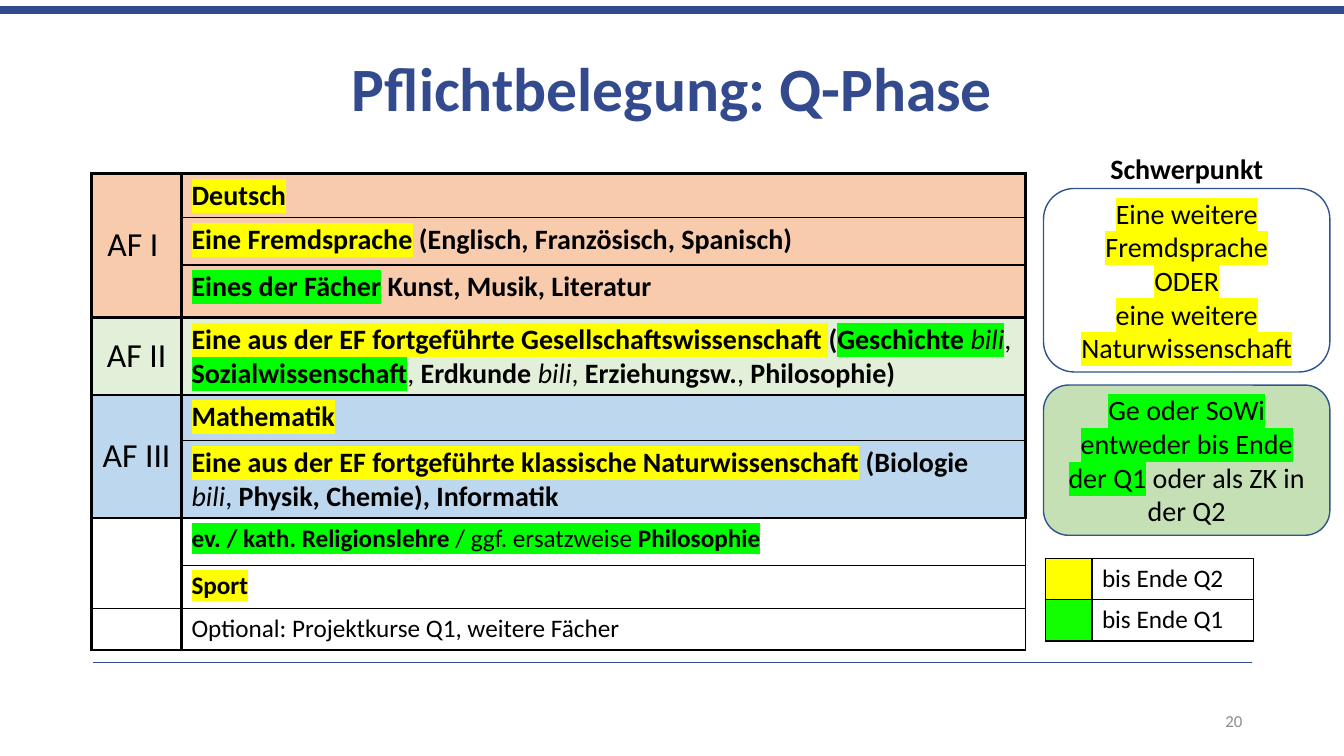
import pptx
import pptx.util
import pptx.dml.color
import pptx.enum.shapes
import pptx.enum.text
from pptx.oxml.ns import qn
from lxml import etree

Inches = pptx.util.Inches
Pt = pptx.util.Pt
ALIGN = pptx.enum.text.PP_ALIGN
ANCHOR = pptx.enum.text.MSO_ANCHOR
SHAPE = pptx.enum.shapes.MSO_SHAPE

BLUE, BLACK, WHITE = "334A8E", "000000", "FFFFFF"
PEACH, MINT, SKY = "F8CBAD", "E2F0D9", "BDD7EE"
THIN, THICK = 1, 2.25
HIGHLIGHTS = {"y": "FFFF00", "g": "00FF00"}


def rgb(value):
    return pptx.dml.color.RGBColor.from_string(value)


class Deck:
    font = "Calibri"

    def __init__(self):
        self.prs = pptx.Presentation()
        self.prs.slide_width = Inches(13.33)
        self.prs.slide_height = Inches(7.5)
        self.s = self.prs.slides.add_slide(self.prs.slide_layouts[6])

    def line(self, x1, x2, y, width):
        c = self.s.shapes.add_connector(
            pptx.enum.shapes.MSO_CONNECTOR.STRAIGHT,
            Inches(x1), Inches(y), Inches(x2), Inches(y))
        c.line.color.rgb = rgb(BLUE)
        c.line.width = Pt(width)
        etree.SubElement(c._element.spPr, qn("a:effectLst"))

    def fill_text(self, tf, paragraphs, size, align=ALIGN.LEFT, color=BLACK):
        tf.word_wrap = True
        for i, runs in enumerate(paragraphs):
            p = tf.add_paragraph() if i else tf.paragraphs[0]
            p.alignment = align
            p.font.name = self.font
            p.font.size = Pt(size)
            p.font.color.rgb = rgb(color)
            all_bold = all("b" in style for _, style in runs)
            if all_bold:
                p.font.bold = True
            for text, style in runs:
                r = p.add_run()
                r.text = text
                if "b" in style and not all_bold:
                    r.font.bold = True
                if "i" in style:
                    r.font.italic = True
                for key in HIGHLIGHTS:
                    if key in style:
                        self.highlight(r, HIGHLIGHTS[key])

    def highlight(self, r, color):
        mark = etree.SubElement(r._r.get_or_add_rPr(), qn("a:highlight"))
        etree.SubElement(mark, qn("a:srgbClr"), val=color)

    def text(self, box, text, size, style="", align=ALIGN.CENTER, color=BLACK):
        tf = self.s.shapes.add_textbox(*map(Inches, box)).text_frame
        tf.vertical_anchor = ANCHOR.MIDDLE
        self.fill_text(tf, [[(text, style)]], size, align, color)
        return tf

    def card(self, box, paragraphs, fill=None):
        sp = self.s.shapes.add_shape(SHAPE.ROUNDED_RECTANGLE, *map(Inches, box))
        sp.shadow.inherit = False
        if fill:
            sp.fill.solid()
            sp.fill.fore_color.rgb = rgb(fill)
        else:
            sp.fill.background()
        sp.line.color.rgb = rgb("30528E")
        sp.line.width = Pt(1)
        sp.text_frame.vertical_anchor = ANCHOR.MIDDLE
        self.fill_text(sp.text_frame, paragraphs, 20, ALIGN.CENTER)

    def table(self, left, top, widths, heights):
        table = self.s.shapes.add_table(
            len(heights), len(widths), Inches(left), Inches(top),
            Inches(sum(widths)), Inches(sum(heights))).table
        table.first_row = table.horz_banding = False
        for column, width in zip(table.columns, widths):
            column.width = Inches(width)
        for row, height in zip(table.rows, heights):
            row.height = Inches(height)
        return table

    def cell(self, cell, fill, borders):
        tcPr = cell._tc.get_or_add_tcPr()
        for side, width in zip("LRTB", borders):
            ln = etree.SubElement(tcPr, qn(f"a:ln{side}"), w=str(int(Pt(width))))
            solid = etree.SubElement(ln, qn("a:solidFill"))
            etree.SubElement(solid, qn("a:srgbClr"), val=BLACK)
        cell.fill.solid()
        cell.fill.fore_color.rgb = rgb(fill)

    def subjects(self, left, top, widths, rows, groups):
        table = self.table(left, top, widths, [row[0] for row in rows])
        tops = [row[1] for row in rows] + [THIN]
        first = 0
        for label, span, fill, size in groups:
            last = first + span
            for i in range(first, last):
                right = THIN if fill == WHITE else THICK
                below = tops[last] if i == first else tops[i + 1]
                if last == len(rows):
                    below = THICK
                self.cell(table.cell(i, 0), fill, (THICK, THICK, tops[i], below))
                self.cell(table.cell(i, 1), fill, (THICK, right, tops[i], tops[i + 1]))
                self.fill_text(table.cell(i, 1).text_frame, [rows[i][2]], size)
            head = table.cell(first, 0)
            if span > 1:
                head.merge(table.cell(last - 1, 0))
            if label:
                head.vertical_anchor = ANCHOR.MIDDLE
                self.fill_text(head.text_frame, [[(label, "")]], 24, ALIGN.CENTER)
            first = last

    def legend(self, left, top, widths, height, entries):
        table = self.table(left, top, widths, [height] * len(entries))
        for i, (color, label) in enumerate(entries):
            for j, fill in enumerate((color, WHITE)):
                self.cell(table.cell(i, j), fill, [THIN] * 4)
            self.fill_text(table.cell(i, 1).text_frame, [[(label, "")]], 18)


ROWS = [
    (0.44, THICK, [("Deutsch", "by")]),
    (0.47, THIN, [("Eine Fremdsprache", "by"),
                  (" (Englisch, Französisch, Spanisch)", "b")]),
    (0.52, THIN, [("Eines der Fächer", "bg"), (" Kunst, Musik, Literatur", "b")]),
    (0.77, THICK, [
        ("Eine aus der EF fortgeführte Gesellschaftswissenschaft ", "by"),
        ("(", "b"), ("Geschichte", "bg"), (" ", "g"), ("bili", "ig"), (", ", ""),
        ("Sozialwissenschaft", "bg"), (", ", ""), ("Erdkunde ", "b"),
        ("bili", "i"), (", ", ""), ("Erziehungsw.", "b"), (", ", ""),
        ("Philosophie)", "b")]),
    (0.45, THICK, [("Mathematik", "by")]),
    (0.77, THIN, [
        ("Eine aus der EF fortgeführte klassische Naturwissenschaft", "by"),
        (" (Biologie ", "b"), ("bili", "i"), (", ", ""),
        ("Physik, Chemie), Informatik", "b")]),
    (0.47, THICK, [("ev. / kath. Religionslehre", "bg"),
                   (" / ggf. ersatzweise ", "g"), ("Philosophie", "bg")]),
    (0.43, THIN, [("Sport", "by")]),
    (0.41, THIN, [("Optional: Projektkurse Q1, weitere Fächer", "")]),
]
GROUPS = [
    ("AF I ", 3, PEACH, 20),
    ("AF II", 1, MINT, 20),
    ("AF III", 2, SKY, 20),
    ("", 2, WHITE, 18),
    ("", 1, WHITE, 18),
]


def main():
    deck = Deck()
    deck.line(0, 13.33, 0.1, 6)
    deck.line(0.92, 12.42, 6.57, 1)
    title = deck.text((0.92, 0.4, 11.5, 1.01), "Pflichtbelegung: Q-Phase", 44, "b", color=BLUE)
    title.paragraphs[0].line_spacing = 0.9
    deck.text((9.42, 6.95, 3, 0.4), "20", 12, align=ALIGN.RIGHT, color="8C8C8C")
    deck.subjects(0.91, 1.72, (0.89, 8.37), ROWS, GROUPS)
    deck.card((10.35, 1.87, 2.84, 1.82), [
        [("Eine weitere Fremdsprache", "y")],
        [("ODER", "y")],
        [("eine weitere Naturwissenschaft", "y")]])
    deck.card((10.35, 3.82, 2.84, 1.49), [
        [("Ge oder SoWi entweder bis Ende der Q1", "g"),
         (" oder als ZK in der Q2", "")]], "C5E0B4")
    deck.legend(10.37, 5.54, (0.46, 1.6), 0.41,
                [("FFFF00", "bis Ende Q2"), ("11FF00", "bis Ende Q1")])
    deck.text((10.35, 1.45, 2.84, 0.43), "Schwerpunkt", 20, "b")
    deck.prs.save("out.pptx")


if __name__ == "__main__":
    main()
